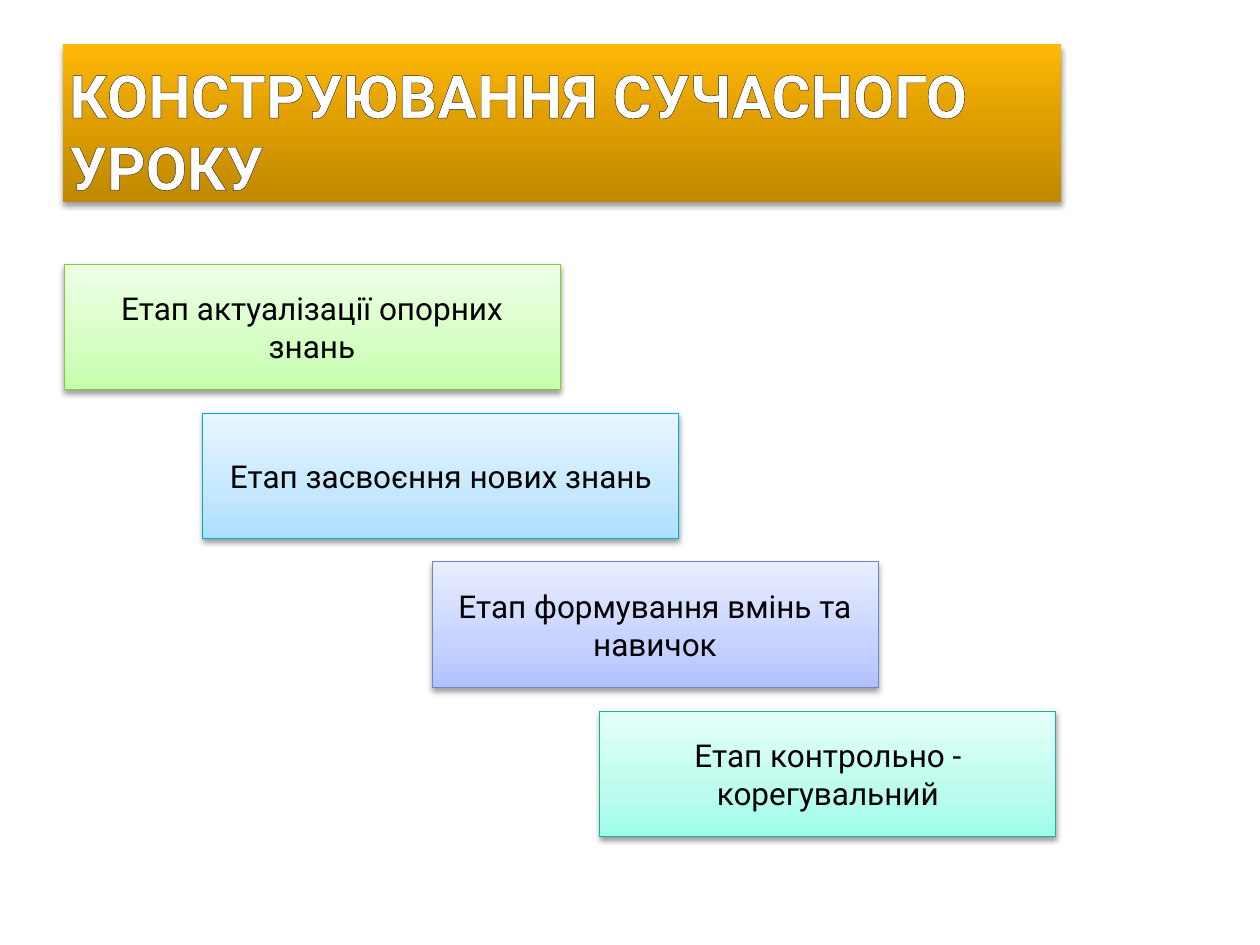
"""Build a slide with a title banner and four cascading lesson stages."""
from lxml import etree
from pptx import Presentation
from pptx import util as u
from pptx.dml.color import RGBColor
from pptx.enum import shapes, text
from pptx.oxml.ns import qn

FONT = "Roboto"
STAGE_TOP, STAGE_STEP, STAGE_HEIGHT = 264, 149, 126
STAGES = [
    ("Етап актуалізації опорних знань", 64, 496, "7CD036",
     ("C4FFAA", "D5FFC3", "EFFFE8")),
    ("Етап засвоєння нових знань", 203, 476, "00A9D7",
     ("ACDFFF", "C4E8FF", "E9F6FF")),
    ("Етап формування вмінь та навичок", 432, 446, "6E86C6",
     ("B0C1FF", "C6D2FF", "E9EEFF")),
    ("Етап контрольно - корегувальний", 600, 456, "16B39E",
     ("9DFDE8", "BBFCED", "E4FFF9")),
]


def px(n):
    """Turn pixels into EMU."""
    return u.Emu(round(n * 914400 / 126))


def rgb(value):
    """Turn a hex string into a colour."""
    return RGBColor.from_string(value)


def add_child(parent, tag, **attrs):
    """Append a DrawingML element and return it."""
    values = {name: str(value) for name, value in attrs.items()}
    return etree.SubElement(parent, qn("a:" + tag), values)


def set_gradient(s, colours, middle):
    """Fill a shape with three colours running from bottom to top."""
    s.fill.gradient()
    s.fill.gradient_angle = 90
    stops = s._element.spPr.find(qn("a:gradFill")).find(qn("a:gsLst"))
    for stop in list(stops):
        stops.remove(stop)
    for position, colour in zip((0, middle, 100), colours):
        stop = add_child(stops, "gs", pos=position * 1000)
        add_child(stop, "srgbClr", val=colour)


def set_shadow(s, blur):
    """Cast a soft black shadow straight down."""
    s.shadow.inherit = False
    effects = s._element.spPr.find(qn("a:effectLst"))
    shadow = add_child(effects, "outerShdw", blurRad=u.Pt(blur), dist=u.Pt(2),
                       dir=90 * 60000, algn="ctr", rotWithShape=0)
    black = add_child(shadow, "srgbClr", val="000000")
    add_child(black, "alpha", val=38000)


def add_box(slide, box, colours, middle, blur):
    """Add a gradient rectangle with a shadow."""
    s = slide.shapes.add_shape(shapes.MSO_SHAPE.RECTANGLE, *map(px, box))
    set_gradient(s, colours, middle)
    set_shadow(s, blur)
    return s


def set_text(s, wording, size, colour, align, anchor):
    """Write one wrapped paragraph and return its run."""
    tf = s.text_frame
    tf.text = wording
    tf.word_wrap = True
    tf.vertical_anchor = anchor
    p = tf.paragraphs[0]
    p.alignment = align
    r = p.runs[0]
    r.font.name, r.font.size = FONT, u.Pt(size)
    r.font.color.rgb = rgb(colour)
    return r


def outline_run(r, colour, width):
    """Draw a thin outline around the letters of a run."""
    props = r.font._element
    line = add_child(props, "ln", w=u.Pt(width))
    add_child(add_child(line, "solidFill"), "srgbClr", val=colour)
    props.insert(0, line)


def add_title(slide):
    """Add the title banner."""
    s = add_box(slide, (63, 44, 998, 158), ("BF8800", "E1A000", "FFB807"), 55, 3.1)
    s.line.fill.background()
    r = set_text(s, "КОНСТРУЮВАННЯ СУЧАСНОГО УРОКУ", 34.2, "FFFFFF",
                 text.PP_ALIGN.LEFT, text.MSO_ANCHOR.BOTTOM)
    r.font.bold = True
    outline_run(r, "252D39", 0.04)
    tf = s.text_frame
    tf.margin_left = tf.margin_right = u.Inches(0.05)
    tf.margin_top = tf.margin_bottom = 0


def add_stage(slide, row, wording, left, width, edge, colours):
    """Add one lesson stage on its row of the cascade."""
    top = STAGE_TOP + row * STAGE_STEP
    s = add_box(slide, (left, top, width, STAGE_HEIGHT), colours, 35, 3.5)
    s.line.color.rgb = rgb(edge)
    s.line.width = u.Pt(0.5)
    set_text(s, wording, 18, "000000", text.PP_ALIGN.CENTER, text.MSO_ANCHOR.MIDDLE)


def main():
    """Build and save the slide."""
    prs = Presentation()
    prs.slide_width, prs.slide_height = px(1260), px(945)
    slide = prs.slides.add_slide(prs.slide_layouts[6])
    add_title(slide)
    for row, stage in enumerate(STAGES):
        add_stage(slide, row, *stage)
    prs.save("out.pptx")


if __name__ == "__main__":
    main()
